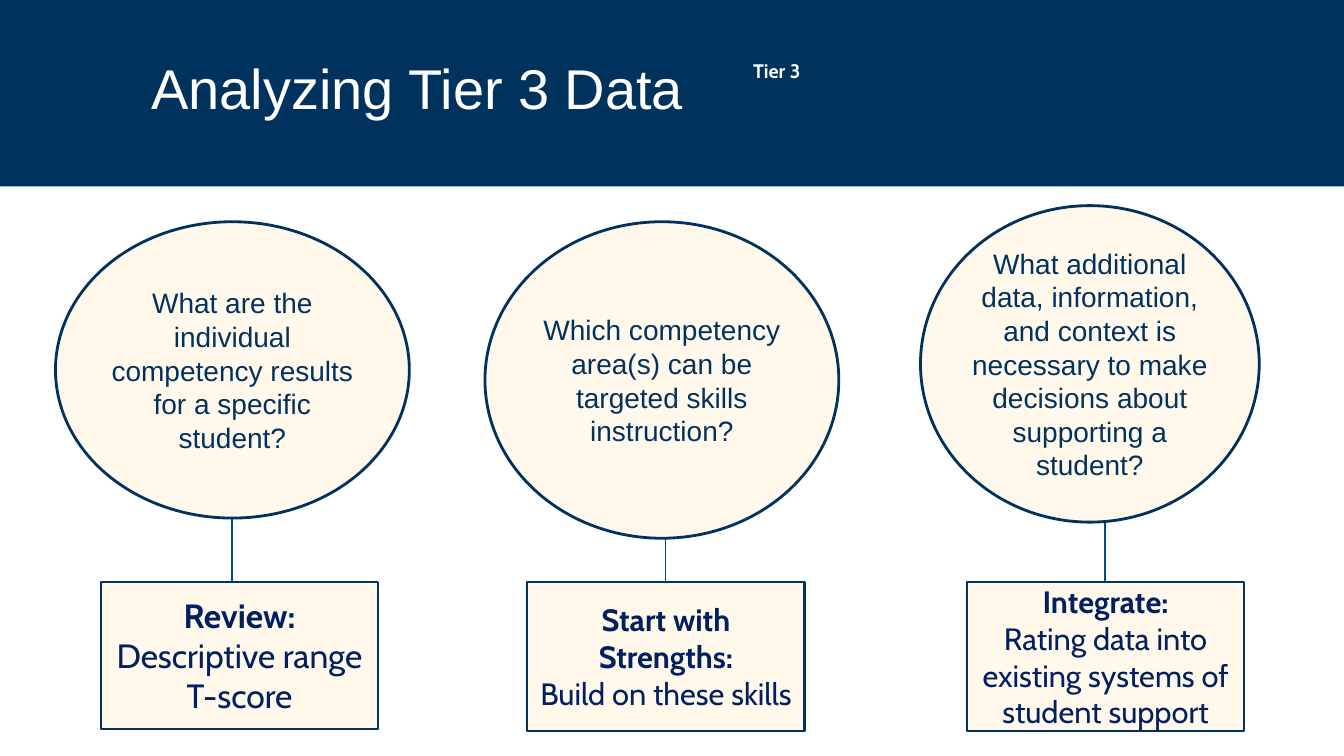
from dataclasses import dataclass

from lxml import etree
from pptx import Presentation
from pptx.dml.color import RGBColor
from pptx.enum.shapes import MSO_CONNECTOR, MSO_SHAPE
from pptx.enum.text import MSO_ANCHOR, PP_ALIGN
from pptx.oxml.ns import qn
from pptx.util import Inches, Pt

RECTANGLE, OVAL = MSO_SHAPE.RECTANGLE, MSO_SHAPE.OVAL
STRAIGHT = MSO_CONNECTOR.STRAIGHT
TOP, MIDDLE = MSO_ANCHOR.TOP, MSO_ANCHOR.MIDDLE
LEFT, CENTER = PP_ALIGN.LEFT, PP_ALIGN.CENTER
TITLE_ONLY_LAYOUT = 5


@dataclass(frozen=True)
class Theme:
    navy: str = "00325E"
    cream: str = "FFF8EB"
    white: str = "FFFFFF"
    action_ink: str = "002060"
    link: str = "004998"
    sans: str = "Arial"
    accent: str = "Cabin"
    title_size: int = 40
    tier_size: int = 14
    question_size: int = 20
    outline: float = 2
    action_outline: float = 1.5
    link_width: float = 1


THEME = Theme()

# Boxes are (left, top, width, height) in inches.
COLUMNS = [
    dict(
        question="What are the individual competency results for a specific student?",
        oval=(0.55, 2.2, 3.51, 2.94),
        heading="Review:",
        details=["Descriptive range", "T-score"],
        action=(1, 5.77, 2.75, 1.46),
        action_size=24,
        link=(2.3, 5.15),
    ),
    dict(
        question="Which competency area(s) can be targeted skills instruction?",
        oval=(4.81, 2.2, 3.51, 3.14),
        heading="Start with Strengths:",
        details=["Build on these skills"],
        action=(5.23, 5.77, 2.75, 1.48),
        action_size=22,
        link=(6.6, 5.17),
    ),
    dict(
        question="What additional data, information, and context is necessary "
                 "to make decisions about supporting a student?",
        oval=(9.13, 2.04, 3.36, 3.14),
        heading="Integrate:",
        details=["Rating data into existing systems of student support"],
        action=(9.59, 5.77, 2.75, 1.48),
        action_size=22,
        link=(10.96, 5.17),
    ),
]


def inches(*lengths):
    return [Inches(length) for length in lengths]


def color(code):
    return RGBColor.from_string(code)


def write(frame, lines, *, size, ink, font, bold_lines=0, align=CENTER,
          anchor=MIDDLE, inset=None, spacing=None):
    """Fill a text frame, with the first bold_lines paragraphs in bold."""
    frame.word_wrap = True
    frame.vertical_anchor = anchor
    if inset is not None:
        frame.margin_left = frame.margin_right = Inches(inset)
        frame.margin_top = frame.margin_bottom = Inches(inset)
    for index, line in enumerate(lines):
        paragraph = frame.paragraphs[0] if index == 0 else frame.add_paragraph()
        paragraph.alignment = align
        paragraph.line_spacing = spacing
        run = paragraph.add_run()
        run.text = line
        run.font.size = Pt(size)
        run.font.name = font
        run.font.bold = index < bold_lines
        run.font.color.rgb = color(ink)


def panel(slide, kind, box, *, fill, outline=None):
    shape = slide.shapes.add_shape(kind, *inches(*box))
    shape.shadow.inherit = False
    shape.fill.solid()
    shape.fill.fore_color.rgb = color(fill)
    if outline is None:
        shape.line.fill.background()
    else:
        shape.line.color.rgb = color(THEME.navy)
        shape.line.width = Pt(outline)
    return shape


def add_link(slide, x, top, bottom):
    link = slide.shapes.add_connector(STRAIGHT, *inches(x, top, x, bottom))
    link.line.color.rgb = color(THEME.link)
    link.line.width = Pt(THEME.link_width)
    etree.SubElement(link._element.spPr, qn("a:effectLst"))


def add_header(slide, box):
    left, top, width, _ = box
    band = panel(slide, RECTANGLE, box, fill=THEME.navy)
    title = slide.shapes.title
    band._element.addnext(title._element)
    title.left, title.top, title.width, title.height = inches(
        left + 1.4, top + 0.56, width - 2.24, 1.08)
    write(title.text_frame, ["Analyzing Tier 3 Data"], size=THEME.title_size,
          ink=THEME.white, font=THEME.sans, align=LEFT, anchor=TOP, spacing=0.9)
    tier = slide.shapes.add_textbox(*inches(left + 4.58, top + 0.54, 6.25, 0.3))
    write(tier.text_frame, ["Tier 3"], size=THEME.tier_size, ink=THEME.white,
          font=THEME.accent, bold_lines=1, anchor=TOP)


def add_column(slide, column):
    """Place a question oval linked to the action box below it."""
    link_x, link_top = column["link"]
    add_link(slide, link_x, link_top, column["action"][1])
    question = panel(slide, OVAL, column["oval"], fill=THEME.cream,
                     outline=THEME.outline)
    write(question.text_frame, [column["question"]], size=THEME.question_size,
          ink=THEME.navy, font=THEME.sans, inset=0)
    action = panel(slide, RECTANGLE, column["action"], fill=THEME.cream,
                   outline=THEME.action_outline)
    write(action.text_frame, [column["heading"], *column["details"]],
          size=column["action_size"], ink=THEME.action_ink, font=THEME.accent,
          bold_lines=1)


def main():
    deck = Presentation()
    deck.slide_width, deck.slide_height = inches(13.33, 7.5)
    slide = deck.slides.add_slide(deck.slide_layouts[TITLE_ONLY_LAYOUT])
    add_header(slide, (0, 0, 13.33, 1.85))
    for column in COLUMNS:
        add_column(slide, column)
    deck.save("out.pptx")


if __name__ == "__main__":
    main()
